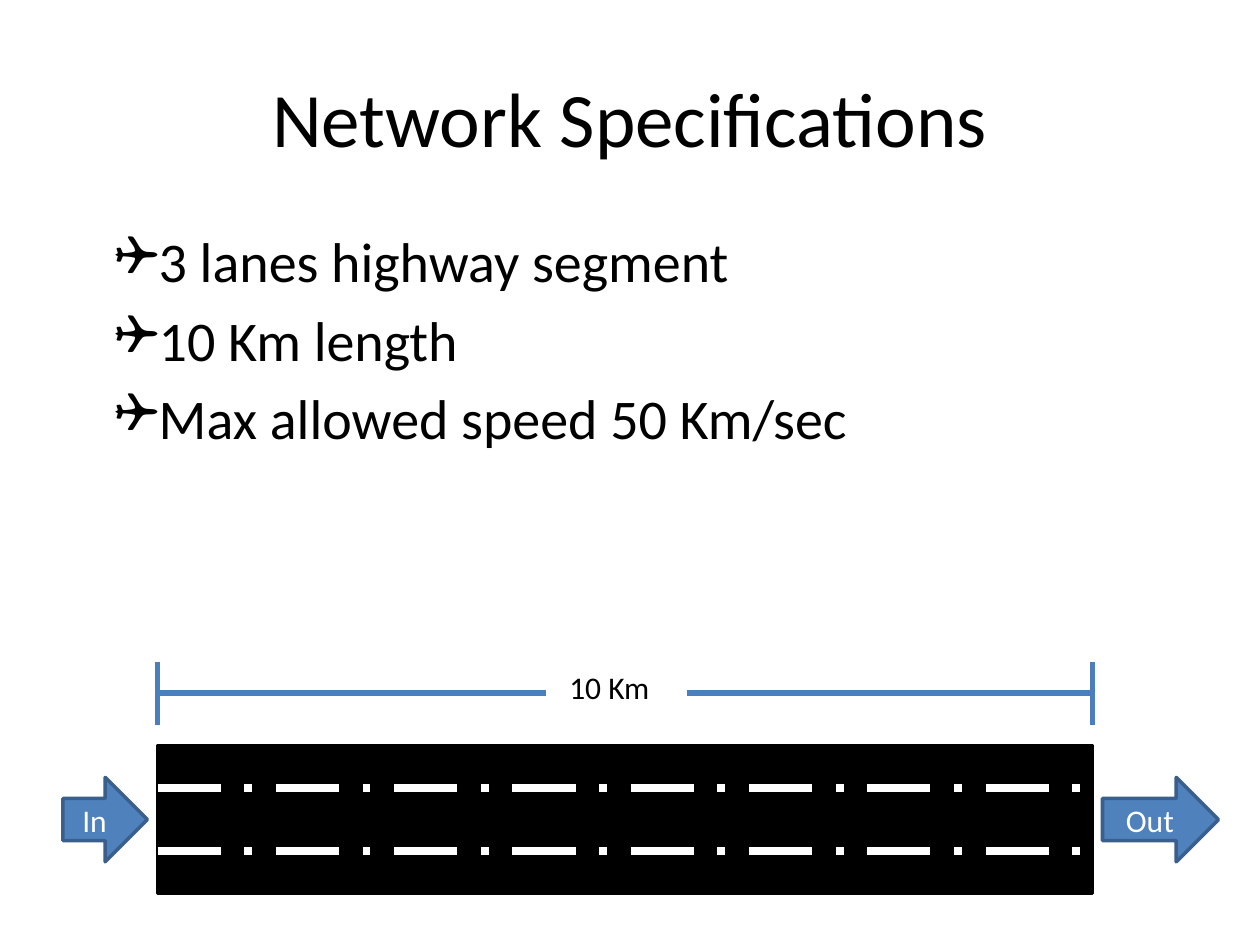
from pptx import Presentation
from pptx.dml.color import RGBColor
from pptx.enum.dml import MSO_LINE
from pptx.enum.shapes import MSO_CONNECTOR, MSO_SHAPE
from pptx.enum.text import MSO_ANCHOR, PP_ALIGN
from pptx.oxml.ns import qn
from pptx.util import Inches, Pt
from lxml.etree import SubElement

BLACK = RGBColor(0x00, 0x00, 0x00)
WHITE = RGBColor(0xFF, 0xFF, 0xFF)
BLUE = RGBColor(0x4F, 0x81, 0xBD)
DARK_BLUE = RGBColor(0x3A, 0x5F, 0x8C)
RULE_BLUE = RGBColor(0x4B, 0x7E, 0xBC)
FONT = "Calibri"


def place(sp, left, top, width, height):
    sp.left, sp.top = Inches(left), Inches(top)
    sp.width, sp.height = Inches(width), Inches(height)


def add_bullet(p, char):
    pPr = p._p.get_or_add_pPr()
    pPr.set("marL", str(Inches(0.29)))
    pPr.set("indent", str(Inches(0.02)))
    SubElement(pPr, qn("a:buFont")).set("typeface", "Wingdings")
    SubElement(pPr, qn("a:buChar")).set("char", char)


def write(tf, *lines, size=18, color=BLACK, align=PP_ALIGN.LEFT,
          anchor=MSO_ANCHOR.TOP, wrap=True, bullet=None, gap=0):
    tf.word_wrap = wrap
    tf.vertical_anchor = anchor
    for i, line in enumerate(lines):
        p = tf.paragraphs[0] if i == 0 else tf.add_paragraph()
        p.alignment = align
        p.space_before = Pt(gap if i else 0)
        if bullet:
            add_bullet(p, bullet)
        r = p.add_run()
        r.text = line
        r.font.name, r.font.size = FONT, Pt(size)
        r.font.color.rgb = color


def add_block(shapes, kind, box, fill, line):
    sp = shapes.add_shape(kind, *map(Inches, box))
    sp.shadow.inherit = False
    sp.fill.solid()
    sp.fill.fore_color.rgb = fill
    sp.line.color.rgb = line
    sp.line.width = Pt(2)
    return sp


def add_line(shapes, x1, y1, x2, y2, color, width, dash=None):
    line = shapes.add_connector(MSO_CONNECTOR.STRAIGHT,
                                *map(Inches, (x1, y1, x2, y2)))
    line.line.color.rgb = color
    line.line.width = Pt(width)
    if dash:
        line.line.dash_style = dash
    SubElement(line._element.spPr, qn("a:effectLst"))


def add_title(slide, text, box):
    title = slide.shapes.title
    place(title, *box)
    write(title.text_frame, text, size=44, align=PP_ALIGN.CENTER,
          anchor=MSO_ANCHOR.MIDDLE)


def add_bullets(slide, lines, box):
    sp = slide.shapes.add_textbox(*map(Inches, box))
    write(sp.text_frame, *lines, size=32, bullet="❑", gap=6.4)


def add_road(slide, box):
    left, top, width, height = box
    road = slide.shapes.add_group_shape().shapes
    add_block(road, MSO_SHAPE.RECTANGLE, box, BLACK, BLACK)
    # Two lane markings, evenly spread about the middle
    for offset in (-0.25, 0.25):
        y = top + height / 2 + offset
        add_line(road, left, y, left + width, y, WHITE, 4.5,
                 MSO_LINE.LONG_DASH_DOT)


def add_dimension(slide, text, box, label_left, label_right):
    left, top, width, height = box
    right, middle = left + width, top + height / 2
    # End ticks
    for x in (left, right):
        add_line(slide.shapes, x, top, x, top + height, RULE_BLUE, 3)
    # Rule on either side of the label
    for x1, x2 in ((left, label_left), (label_right, right)):
        add_line(slide.shapes, x1, middle, x2, middle, RULE_BLUE, 3)
    sp = slide.shapes.add_textbox(Inches(label_left + 0.09), Inches(top),
                                  Inches(label_right - label_left - 0.09),
                                  Inches(0.4))
    write(sp.text_frame, text, wrap=False)


def add_flow_arrow(slide, text, box):
    sp = add_block(slide.shapes, MSO_SHAPE.RIGHT_ARROW, box, BLUE, DARK_BLUE)
    write(sp.text_frame, text, color=WHITE, align=PP_ALIGN.CENTER,
          anchor=MSO_ANCHOR.MIDDLE)


def main():
    prs = Presentation()
    prs.slide_width, prs.slide_height = Inches(10), Inches(7.5)
    slide = prs.slides.add_slide(prs.slide_layouts[5])

    add_title(slide, "Network Specifications", (0.5, 0.3, 9, 1.25))
    add_bullets(slide, ("3 lanes highway segment", "10 Km length",
                        "Max allowed speed 50 Km/sec"), (0.5, 1.75, 9, 4.95))

    # Highway with its length and traffic direction
    road_left, road_width = 1.25, 7.42
    add_road(slide, (road_left, 5.92, road_width, 1.17))
    add_dimension(slide, "10 Km", (road_left, 5.25, road_width, 0.5),
                  4.33, 5.45)
    add_flow_arrow(slide, "In", (0.5, 6.17, 0.67, 0.67))
    add_flow_arrow(slide, "Out", (8.75, 6.17, 0.92, 0.67))

    prs.save("out.pptx")


if __name__ == "__main__":
    main()
